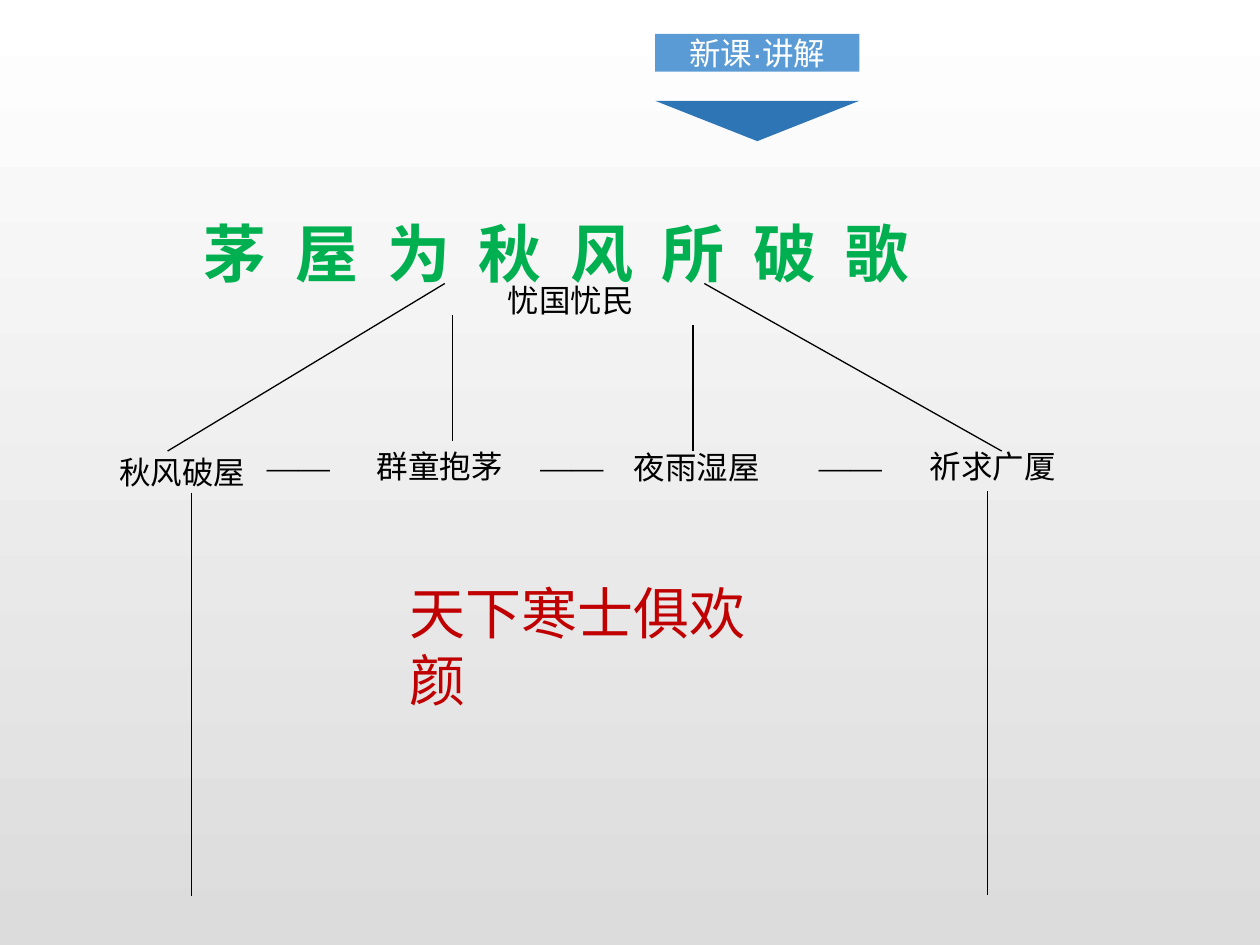
from typing import NamedTuple

from lxml import etree
from pptx import Presentation
from pptx import util as u
from pptx.dml.color import RGBColor
from pptx.enum import shapes, text
from pptx.oxml.ns import qn

# The slide is a grid of 100 columns by 75 rows
COLS, ROWS = 100, 75
CELL = u.Inches(0.1)

BLACK = RGBColor(0x00, 0x00, 0x00)
WHITE = RGBColor(0xFF, 0xFF, 0xFF)
GRAY = RGBColor(0xDC, 0xDC, 0xDC)
GREEN = RGBColor(0x00, 0xB0, 0x50)
RED = RGBColor(0xC0, 0x00, 0x00)
BLUE = RGBColor(0x5B, 0x9B, 0xD5)
NAVY = RGBColor(0x2E, 0x75, 0xB6)

SERIF, SANS = "Times New Roman", "Arial"


class Box(NamedTuple):
    col: float
    row: float
    wide: float
    high: float


class Label(NamedTuple):
    words: str
    box: Box
    size: int = 18
    color: RGBColor = BLACK
    bold: bool = False
    wrap: bool = False


class Line(NamedTuple):
    col: float
    row: float
    to_col: float
    to_row: float


def cells(spot: tuple) -> list:
    return [round(n * CELL) for n in spot]


def style(item: object, form: dict) -> None:
    for key, value in form.items():
        setattr(item, key, value)


def write(frame, words: str, name: str, size: int, color: RGBColor, bold: bool = False):
    para = frame.paragraphs[0]
    run = para.add_run()
    run.text = words
    style(run.font, {"name": name, "size": u.Pt(size), "bold": bold})
    run.font.color.rgb = color
    return para


def add_label(page, label: Label) -> None:
    frame = page.shapes.add_textbox(*cells(label.box)).text_frame
    style(frame, {"word_wrap": label.wrap, "auto_size": text.MSO_AUTO_SIZE.SHAPE_TO_FIT_TEXT})
    write(frame, label.words, SERIF, label.size, label.color, label.bold)


def add_line(page, line: Line) -> None:
    link = page.shapes.add_connector(shapes.MSO_CONNECTOR.STRAIGHT, *cells(line))
    link.line.width = u.Pt(0.75)
    link.line.color.rgb = BLACK
    etree.SubElement(link._element.spPr, qn("a:effectLst"))


def add_block(group, kind, box: Box, color: RGBColor):
    block = group.shapes.add_shape(kind, *cells(box))
    block.shadow.inherit = False
    block.fill.solid()
    block.fill.fore_color.rgb = color
    block.line.fill.background()
    return block


# Stages of the poem, joined by dashes
STAGES = [
    Label("秋风破屋", Box(8.5, 35.5, 13.3, 4), wrap=True),
    Label("群童抱茅", Box(28.9, 35, 12, 4)),
    Label("夜雨湿屋", Box(49.3, 35.1, 12, 4)),
    Label("祈求广厦", Box(72.8, 35, 12, 4)),
]
DASHES = [Label("——", Box(col, 35, 7, 4)) for col in (20.2, 41.9, 64)]

TITLE = Label("茅  屋  为  秋  风  所  破  歌", Box(15.2, 16.5, 59.7, 7.1), 36, GREEN, True)
THEME = Label("忧国忧民", Box(39.3, 21.8, 13.7, 4), wrap=True)
WISH = Label("天下寒士俱欢颜", Box(31.5, 45.4, 33, 6.4), 32, RED, wrap=True)

# Branches from the title, then the two long stems below
LINES = [
    Line(35.3, 22.5, 13.3, 35.8),
    Line(35.9, 25, 35.9, 35),
    Line(55, 25.8, 55, 35.8),
    Line(55.9, 22.5, 79.5, 35.8),
    Line(15.2, 39.1, 15.2, 71.1),
    Line(78.4, 39, 78.4, 71),
]


def add_tag(page) -> None:
    group = page.shapes.add_group_shape()
    bar = add_block(group, shapes.MSO_SHAPE.RECTANGLE, Box(52, 2.7, 16.2, 3), BLUE)
    frame = bar.text_frame
    sides = ("left", "top", "right", "bottom")
    style(frame, {f"margin_{side}": 0 for side in sides})
    style(frame, {"vertical_anchor": text.MSO_ANCHOR.MIDDLE, "word_wrap": True})
    para = write(frame, "新课·讲解", SANS, 18, WHITE)
    para.alignment = text.PP_ALIGN.CENTER
    tip = add_block(group, shapes.MSO_SHAPE.ISOSCELES_TRIANGLE, Box(52, 8, 16.2, 3.2), NAVY)
    tip.rotation = 180


def main() -> None:
    deck = Presentation()
    style(deck, {"slide_width": COLS * CELL, "slide_height": ROWS * CELL})
    page = deck.slides.add_slide(deck.slide_layouts[6])

    # Background, white at the top
    fill = page.background.fill
    fill.gradient()
    fill.gradient_angle = 270
    for stop, color, place in zip(fill.gradient_stops, (WHITE, GRAY), (0, 1)):
        stop.color.rgb = color
        stop.position = place

    # Diagram
    for label in [TITLE, *STAGES, *DASHES, WISH, THEME]:
        add_label(page, label)
    for line in LINES:
        add_line(page, line)

    # Section tag
    add_tag(page)
    deck.save("out.pptx")


if __name__ == "__main__":
    main()
